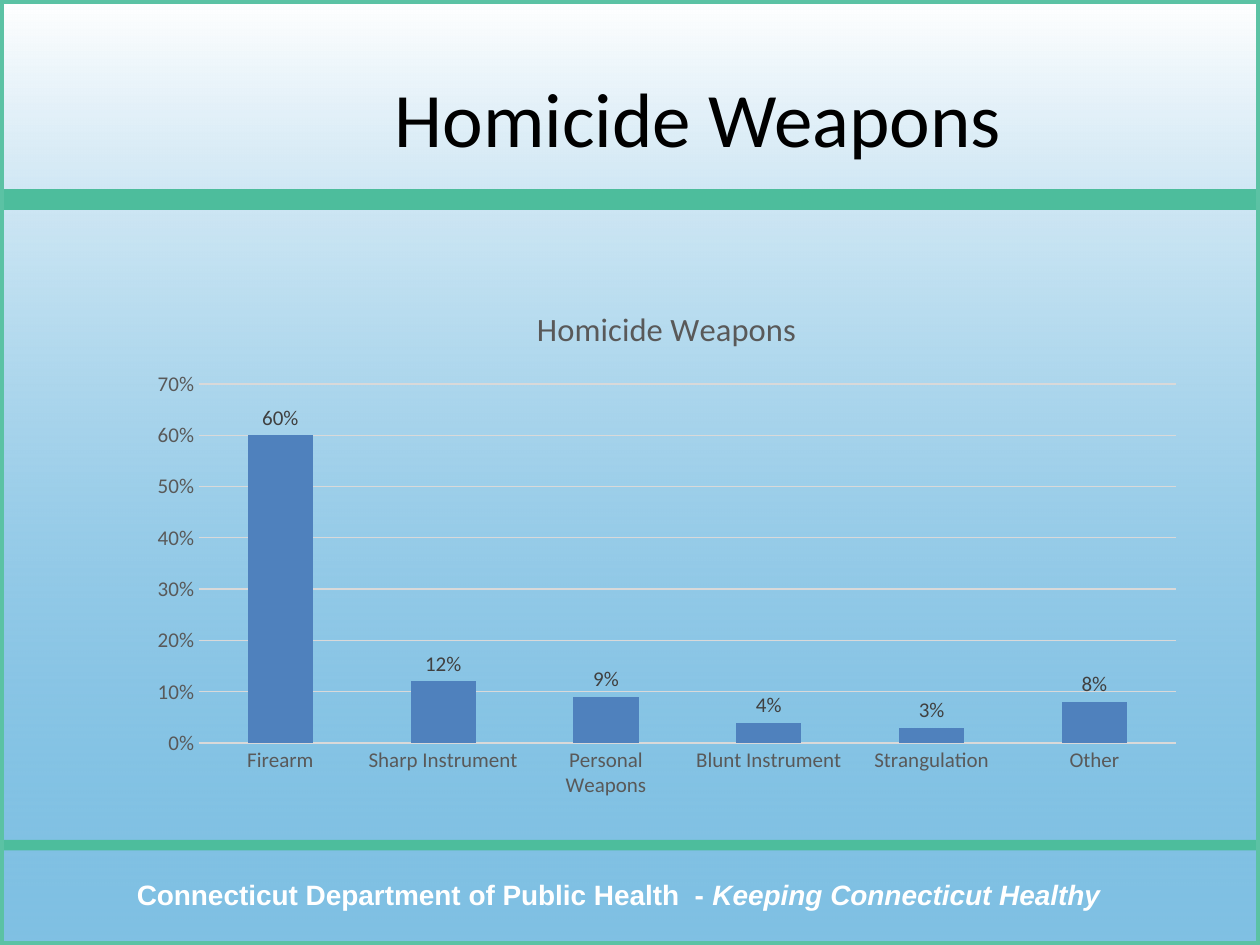
from lxml.etree import SubElement
from pptx import Presentation
from pptx.chart.data import CategoryChartData
from pptx.dml.color import RGBColor
from pptx.enum.chart import XL_CHART_TYPE as CT, XL_LABEL_POSITION as LP, XL_TICK_MARK as TM
from pptx.enum.shapes import MSO_SHAPE
from pptx.enum.text import MSO_ANCHOR, PP_ALIGN
from pptx.oxml.ns import qn
from pptx.util import Pt

W, H = 720, 540
TITLE = "Homicide Weapons"
FOOTER = [("Connecticut Department of Public Health  - ", False),
          ("Keeping Connecticut Healthy", True)]
WEAPONS = {"Firearm": 0.6, "Sharp Instrument": 0.12, "Personal Weapons": 0.09,
           "Blunt Instrument": 0.04, "Strangulation": 0.03, "Other": 0.08}
BANDS = [(480, 6), (108, 12)]  # top, height
GREEN, FRAME, BLUE, GREY = "4DBD9C", "5BC2A4", "4F81BD", "595959"


def rgb(value):
    return RGBColor.from_string(value)


def set_font(font, size, color, name="Calibri", bold=False, italic=False):
    font.size, font.name, font.bold, font.italic = Pt(size), name, bold, italic
    font.color.rgb = rgb(color)


def add_rect(x, y, w, h, fill=None):
    s = slide.shapes.add_shape(MSO_SHAPE.RECTANGLE, Pt(x), Pt(y), Pt(w), Pt(h))
    s.shadow.inherit = False
    s.line.fill.background()
    if fill:
        s.fill.solid()
        s.fill.fore_color.rgb = rgb(fill)
    else:
        s.fill.background()
    return s


def add_text(runs, x, y, w, h, anchor=MSO_ANCHOR.TOP, **fmt):
    """Add a centred box; runs are (text, italic) pairs."""
    tf = slide.shapes.add_textbox(Pt(x), Pt(y), Pt(w), Pt(h)).text_frame
    tf.word_wrap = True
    tf.vertical_anchor = anchor
    p = tf.paragraphs[0]
    p.alignment = PP_ALIGN.CENTER
    for text, italic in runs:
        r = p.add_run()
        r.text = text
        set_font(r.font, italic=italic, **fmt)


def add_backdrop():
    s = add_rect(0, 0, W, H)
    s.fill.gradient()
    s.fill.gradient_angle = 90
    for stop, color in zip(s.fill.gradient_stops, ("0082C8", "FFFFFF")):
        stop.color.rgb = rgb(color)
    blue = next(s._element.spPr.iter(qn("a:srgbClr")))
    SubElement(blue, qn("a:alpha"), val="50000")


def add_weapon_chart(x, y, w, h):
    data = CategoryChartData(number_format="0%")
    data.categories = list(WEAPONS)
    data.add_series("Series 1", list(WEAPONS.values()))
    chart = slide.shapes.add_chart(CT.COLUMN_CLUSTERED, Pt(x), Pt(y), Pt(w), Pt(h), data).chart
    set_font(chart.font, 10, "000000")
    chart.has_legend = False
    chart.has_title = True
    tf = chart.chart_title.text_frame
    tf.text = TITLE
    set_font(tf.paragraphs[0].runs[0].font, 18.6, GREY)

    for axis in (chart.category_axis, chart.value_axis):
        axis.major_tick_mark = axis.minor_tick_mark = TM.NONE
        axis.format.line.fill.background()
        set_font(axis.tick_labels.font, 12, GREY)
    axis = chart.value_axis
    axis.minimum_scale, axis.maximum_scale, axis.major_unit = 0, 0.7, 0.1
    axis.tick_labels.number_format = "0%"
    axis.tick_labels.number_format_is_linked = False
    grid = axis.major_gridlines.format.line
    grid.width = Pt(0.75)
    grid.color.rgb = rgb("D9D9D9")

    plot = chart.plots[0]
    plot.gap_width = 150
    plot.vary_by_categories = False
    fill = plot.series[0].format.fill
    fill.solid()
    fill.fore_color.rgb = rgb(BLUE)
    labels = plot.series[0].data_labels
    labels.show_value = True
    labels.position = LP.OUTSIDE_END
    labels.number_format = "0%"
    labels.number_format_is_linked = False
    set_font(labels.font, 12, "404040")


prs = Presentation()
prs.slide_width, prs.slide_height = Pt(W), Pt(H)
slide = prs.slides.add_slide(prs.slide_layouts[6])

add_backdrop()
for top, height in BANDS:
    add_rect(0, top, W, height, GREEN)
add_text(FOOTER, 35.5, 498, 636, 27, size=16, color="FFFFFF", name="Arial", bold=True)
frame = add_rect(0, 0, W, H)
frame.line.color.rgb = rgb(FRAME)
frame.line.width = Pt(4.5)
add_text([(TITLE, False)], 114, 21.6, 570, 90, MSO_ANCHOR.MIDDLE, size=44, color="000000")
add_weapon_chart(78, 162, 606, 300)

prs.save("out.pptx")
